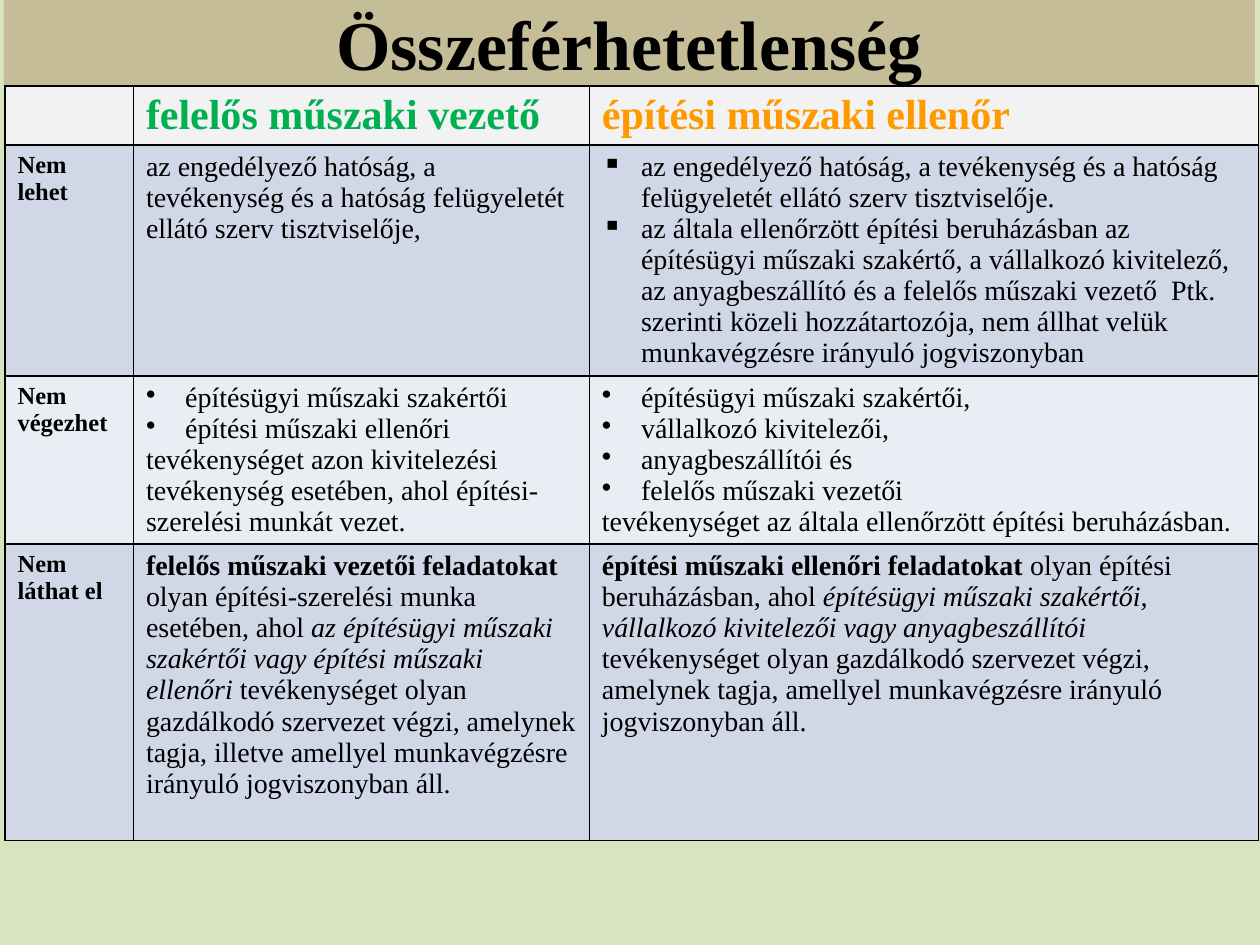
from dataclasses import dataclass

from lxml import etree
from pptx import Presentation
from pptx.dml.color import RGBColor
from pptx.enum import text as text_enum
from pptx.oxml import ns
from pptx.util import Cm, Pt

FONT = "Times New Roman"
COLORS = {
    "background": "D7E4BD",
    "title": "C4BD97",
    "header": "F2F2F2",
    "dark band": "D0D8E8",
    "light band": "E9EDF4",
    "text": "000000",
    "manager": "00B050",
    "inspector": "FF9900",
}
COLUMN_WIDTHS = (2.59, 9.19, 13.49)
BULLET_INDENT = Cm(0.79)


@dataclass(frozen=True)
class Span:
    text: str
    bold: bool = False
    italic: bool = False


@dataclass(frozen=True)
class Entry:
    """One paragraph of a table cell."""
    spans: tuple[Span, ...]
    size: int = 16
    color: str = "text"
    bullet: str = ""


@dataclass(frozen=True)
class Row:
    height: float
    fill: str
    cells: tuple[list[Entry], ...]


def plain(text: str) -> Entry:
    return Entry((Span(text),))


def header(text: str, color: str) -> list[Entry]:
    return [Entry((Span(text, bold=True),), 24, color)]


def label(text: str) -> list[Entry]:
    return [Entry((Span(text, bold=True),), 14)]


def bullets(mark: str, *texts: str) -> list[Entry]:
    return [Entry((Span(text),), bullet=mark) for text in texts]


def duties(lead: str, condition: str, roles: str, rest: str) -> list[Entry]:
    return [Entry((Span(lead, bold=True), Span(condition), Span(roles, italic=True), Span(rest)))]


ROWS = (
    Row(1.19, "header", (
        [],
        header("felelős műszaki vezető", "manager"),
        header("építési műszaki ellenőr", "inspector"),
    )),
    Row(4.66, "dark band", (
        label("Nem lehet"),
        [plain("az engedélyező hatóság, a tevékenység és a hatóság felügyeletét "
               "ellátó szerv tisztviselője,")],
        bullets(
            "▪",
            "az engedélyező hatóság, a tevékenység és a hatóság felügyeletét "
            "ellátó szerv tisztviselője.",
            "az általa ellenőrzött építési beruházásban az építésügyi műszaki szakértő, "
            "a vállalkozó kivitelező, az anyagbeszállító és a felelős műszaki vezető  Ptk. "
            "szerinti közeli hozzátartozója, nem állhat velük munkavégzésre irányuló "
            "jogviszonyban"),
    )),
    Row(3.39, "light band", (
        label("Nem végezhet"),
        bullets("•", "építésügyi műszaki szakértői", "építési műszaki ellenőri")
        + [plain("tevékenységet azon kivitelezési tevékenység esetében, "
                 "ahol építési-szerelési munkát vezet.")],
        bullets("•", "építésügyi műszaki szakértői,", "vállalkozó kivitelezői,",
                "anyagbeszállítói és", "felelős műszaki vezetői")
        + [plain("tevékenységet az általa ellenőrzött építési beruházásban.")],
    )),
    Row(5.97, "dark band", (
        label("Nem láthat el"),
        duties("felelős műszaki vezetői feladatokat ",
               "olyan építési-szerelési munka esetében, ahol ",
               "az építésügyi műszaki szakértői vagy építési műszaki ellenőri ",
               "tevékenységet olyan gazdálkodó szervezet végzi, amelynek tagja, "
               "illetve amellyel munkavégzésre irányuló jogviszonyban áll."),
        duties("építési műszaki ellenőri feladatokat ",
               "olyan építési beruházásban, ahol ",
               "építésügyi műszaki szakértői, vállalkozó kivitelezői vagy anyagbeszállítói ",
               "tevékenységet olyan gazdálkodó szervezet végzi, amelynek tagja, "
               "amellyel munkavégzésre irányuló jogviszonyban áll."),
    )),
)


def rgb(name: str) -> RGBColor:
    return RGBColor.from_string(COLORS[name])


def paint(fill, name: str) -> None:
    fill.solid()
    fill.fore_color.rgb = rgb(name)


def set_font(font, size: int, color: str) -> None:
    font.name = FONT
    font.size = Pt(size)
    font.color.rgb = rgb(color)


def add_borders(cell) -> None:
    properties = cell._tc.get_or_add_tcPr()
    for position, side in enumerate(("a:lnL", "a:lnR", "a:lnT", "a:lnB")):
        line = etree.Element(ns.qn(side), w=str(Pt(1)))
        fill = etree.SubElement(line, ns.qn("a:solidFill"))
        etree.SubElement(fill, ns.qn("a:srgbClr"), val=COLORS["text"])
        properties.insert(position, line)


def add_bullet(paragraph, mark: str) -> None:
    properties = paragraph._p.get_or_add_pPr()
    properties.set("marL", str(BULLET_INDENT))
    properties.set("indent", str(-BULLET_INDENT))
    bullet = etree.Element(ns.qn("a:buChar"), char=mark)
    properties.insert(0, bullet)


def write_cell(cell, entries: list[Entry], fill: str) -> None:
    paint(cell.fill, fill)
    add_borders(cell)
    frame = cell.text_frame
    for index, entry in enumerate(entries):
        paragraph = frame.add_paragraph() if index else frame.paragraphs[0]
        set_font(paragraph.font, entry.size, entry.color)
        if entry.bullet:
            add_bullet(paragraph, entry.bullet)
        for span in entry.spans:
            run = paragraph.add_run()
            run.text = span.text
            run.font.bold = span.bold
            run.font.italic = span.italic


def add_title(slide) -> None:
    title = slide.shapes.title
    title.left, title.top, title.width, title.height = Cm(0.08), Cm(0), Cm(25.22), Cm(1.73)
    paint(title.fill, "title")
    frame = title.text_frame
    frame.text = "Összeférhetetlenség"
    frame.auto_size = text_enum.MSO_AUTO_SIZE.NONE
    frame.vertical_anchor = text_enum.MSO_ANCHOR.MIDDLE
    paragraph = frame.paragraphs[0]
    paragraph.alignment = text_enum.PP_ALIGN.CENTER
    set_font(paragraph.font, 40, "text")
    paragraph.font.bold = True


def add_comparison(slide) -> None:
    table = slide.shapes.add_table(
        len(ROWS), len(COLUMN_WIDTHS), Cm(0.1), Cm(1.73),
        Cm(sum(COLUMN_WIDTHS)), Cm(sum(row.height for row in ROWS))).table
    table.first_row = table.horz_banding = False
    for column, width in zip(table.columns, COLUMN_WIDTHS):
        column.width = Cm(width)
    for table_row, row in zip(table.rows, ROWS):
        table_row.height = Cm(row.height)
        for cell, entries in zip(table_row.cells, row.cells):
            write_cell(cell, entries, row.fill)


def main() -> None:
    presentation = Presentation()
    presentation.slide_width, presentation.slide_height = Cm(25.4), Cm(19.05)
    slide = presentation.slides.add_slide(presentation.slide_layouts[5])
    paint(slide.background.fill, "background")
    add_title(slide)
    add_comparison(slide)
    presentation.save("out.pptx")


if __name__ == "__main__":
    main()
